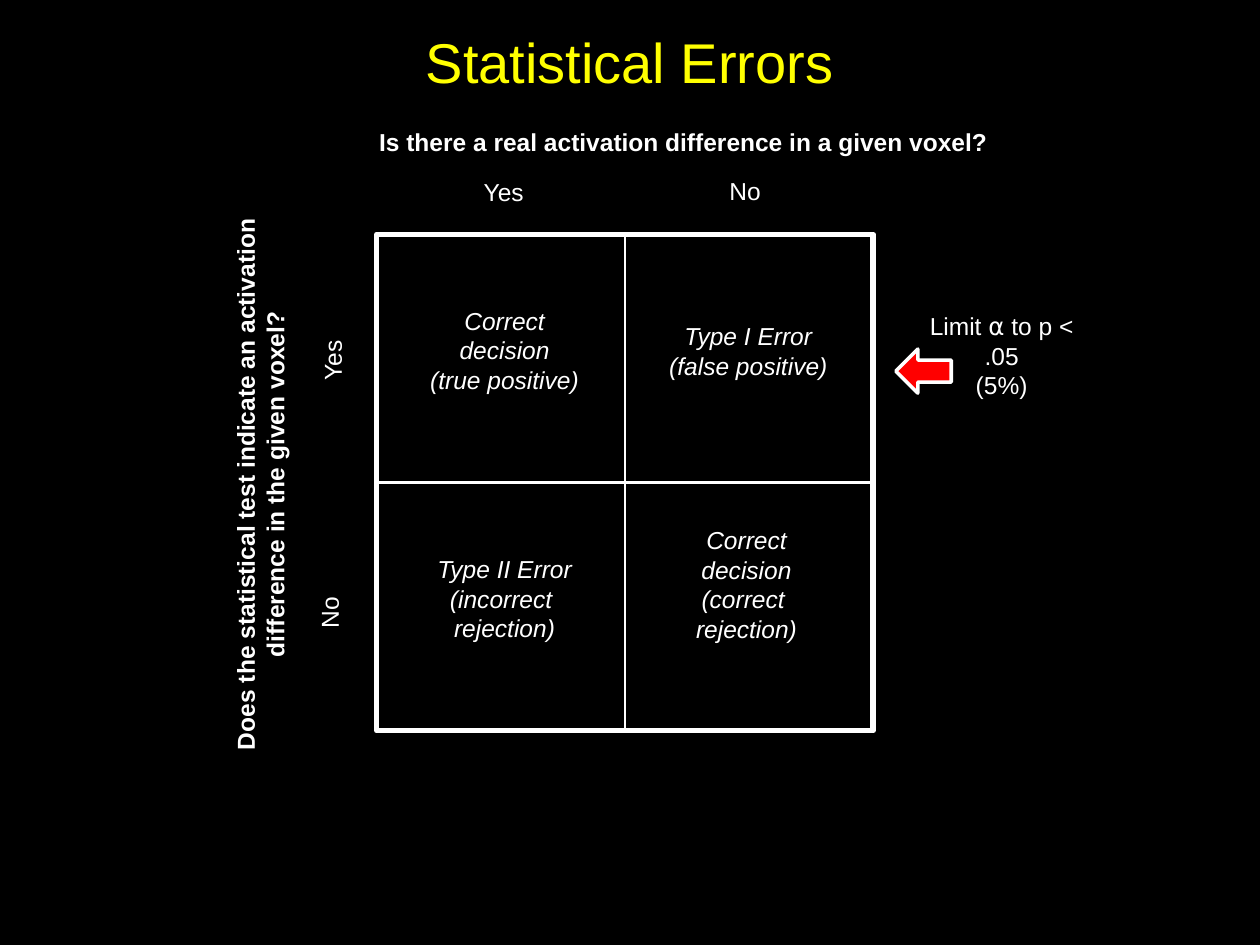
from pptx import Presentation
from pptx.dml.color import RGBColor
from pptx.enum.shapes import MSO_CONNECTOR, MSO_SHAPE
from pptx.enum.text import MSO_ANCHOR, PP_ALIGN
from pptx.oxml.ns import qn
from pptx.util import Inches, Pt
from lxml import etree

BLACK, WHITE, YELLOW, RED = "000000", "FFFFFF", "FFFF00", "FF0000"
BODY = {"name": "Arial", "size": Pt(14)}
TITLE = {**BODY, "size": Pt(32)}
BOLD = {**BODY, "bold": True}
ITALIC = {**BODY, "italic": True}


def rgb(value):
    return RGBColor.from_string(value)


def add_text(s, box, lines, fmt=BODY, color=WHITE, align=PP_ALIGN.LEFT,
             wrap=False, rotation=0, anchor=MSO_ANCHOR.TOP):
    sp = s.shapes.add_textbox(*map(Inches, box))
    sp.rotation = rotation
    tf = sp.text_frame
    tf.word_wrap = wrap
    tf.vertical_anchor = anchor
    for i, line in enumerate(lines):
        p = tf.add_paragraph() if i else tf.paragraphs[0]
        p.alignment = align
        r = p.add_run()
        r.text = line
        for name, value in fmt.items():
            setattr(r.font, name, value)
        r.font.color.rgb = rgb(color)


def add_outlined(s, kind, box, width, fill=None):
    sp = s.shapes.add_shape(kind, *map(Inches, box))
    sp.shadow.inherit = False
    if fill:
        sp.fill.solid()
        sp.fill.fore_color.rgb = rgb(fill)
    else:
        sp.fill.background()
    sp.line.color.rgb = rgb(WHITE)
    sp.line.width = Pt(width)
    return sp


def add_title(s, box):
    add_text(s, box, ["Statistical Errors"], TITLE, YELLOW, PP_ALIGN.CENTER,
             wrap=True, anchor=MSO_ANCHOR.MIDDLE)


def add_grid(s, box):
    frame = add_outlined(s, MSO_SHAPE.RECTANGLE, box, 3)
    # Dividers join opposite sides: top to bottom, right to left
    for start, end in ((0, 2), (3, 1)):
        line = s.shapes.add_connector(MSO_CONNECTOR.STRAIGHT, 0, 0, 0, 0)
        line.begin_connect(frame, start)
        line.end_connect(frame, end)
        line.line.color.rgb = rgb(WHITE)
        line.line.width = Pt(1.5)
        etree.SubElement(line._element.spPr, qn("a:effectLst"))


def add_outcomes(s, box):
    left, top = box[:2]
    # Offset from the grid corner, size, lines
    outcomes = [
        (0.32, 0.52, 1.39, 0.81, ["Correct", "decision", "(true positive)"]),
        (2.22, 0.64, 1.46, 0.57, ["Type I Error", "(false positive)"]),
        (0.38, 2.49, 1.27, 0.81, ["Type II Error", "(incorrect ", "rejection)"]),
        (2.43, 2.26, 1.01, 1.04,
         ["Correct", "decision", "(correct ", "rejection)"]),
    ]
    for dx, dy, w, h, lines in outcomes:
        add_text(s, (left + dx, top + dy, w, h), lines, ITALIC,
                 align=PP_ALIGN.CENTER)


def add_axes(s, box):
    left, top = box[:2]
    # Column question and answers
    add_text(s, (left - 0.08, top - 0.9, 5.05, 0.34),
             ["Is there a real activation difference in a given voxel?"], BOLD)
    add_text(s, (left + 0.75, top - 0.5, 0.52, 0.34), ["Yes"])
    add_text(s, (left + 2.7, top - 0.51, 0.45, 0.34), ["No"])
    # Row question and answers, read upwards
    add_text(s, (left - 3.42, top + 1.69, 5.01, 0.59),
             ["Does the statistical test indicate an activation "
              "difference in the given voxel?"],
             BOLD, align=PP_ALIGN.CENTER, wrap=True, rotation=270)
    add_text(s, (left - 0.61, top + 0.83, 0.52, 0.34), ["Yes"], rotation=270)
    add_text(s, (left - 0.6, top + 2.83, 0.45, 0.34), ["No"], rotation=270)


def add_alpha_note(s, box):
    left, top, width, height = box
    add_outlined(s, MSO_SHAPE.LEFT_ARROW, (left, top + 0.35, 0.44, 0.35), 2, RED)
    add_text(s, (left + 0.04, top, width, height),
             ["Limit ⍺ to p < .05", "(5%)"], align=PP_ALIGN.CENTER, wrap=True)


def main():
    prs = Presentation()
    prs.slide_width, prs.slide_height = Inches(10), Inches(7.5)
    s = prs.slides.add_slide(prs.slide_layouts[6])
    s.background.fill.solid()
    s.background.fill.fore_color.rgb = rgb(BLACK)

    grid = (2.99, 1.86, 3.94, 3.94)
    add_title(s, (0.75, 0.17, 8.5, 0.63))
    add_grid(s, grid)
    add_axes(s, grid)
    add_outcomes(s, grid)
    add_alpha_note(s, (7.11, 2.42, 1.6, 0.57))
    prs.save("out.pptx")


if __name__ == "__main__":
    main()
